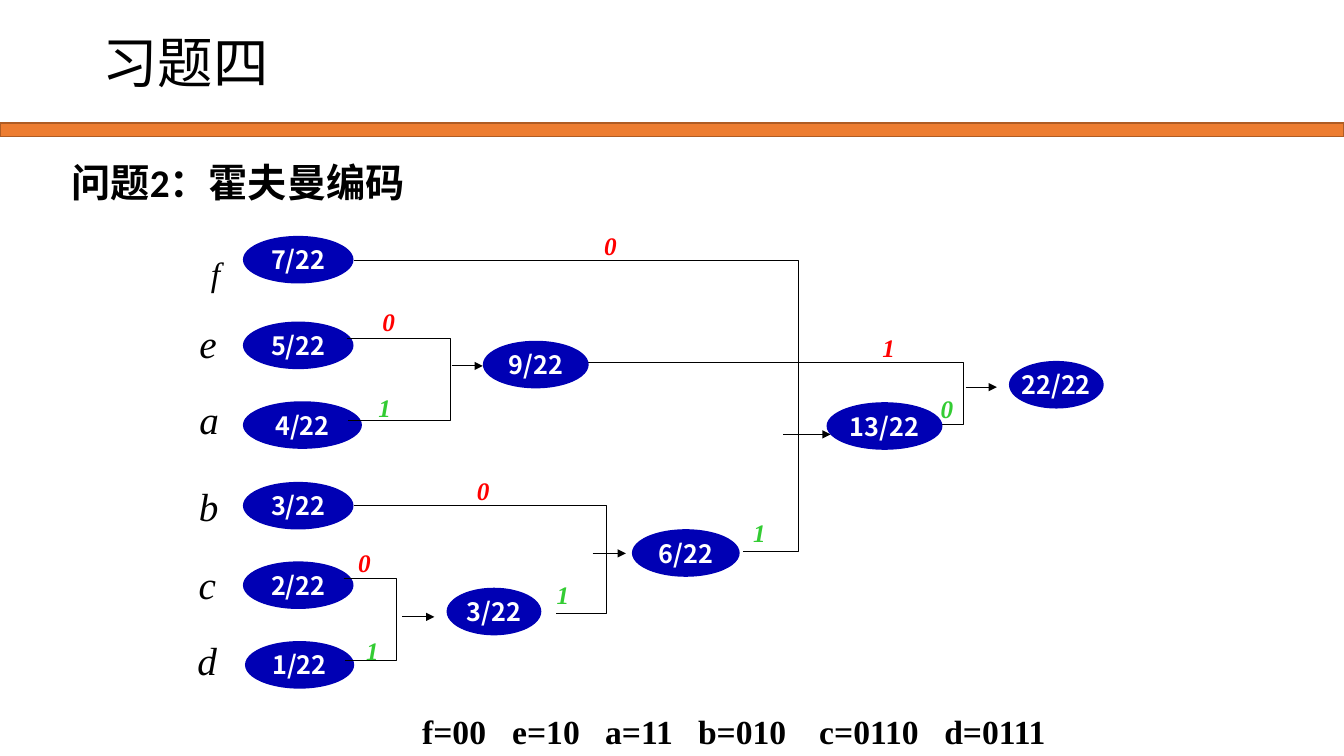
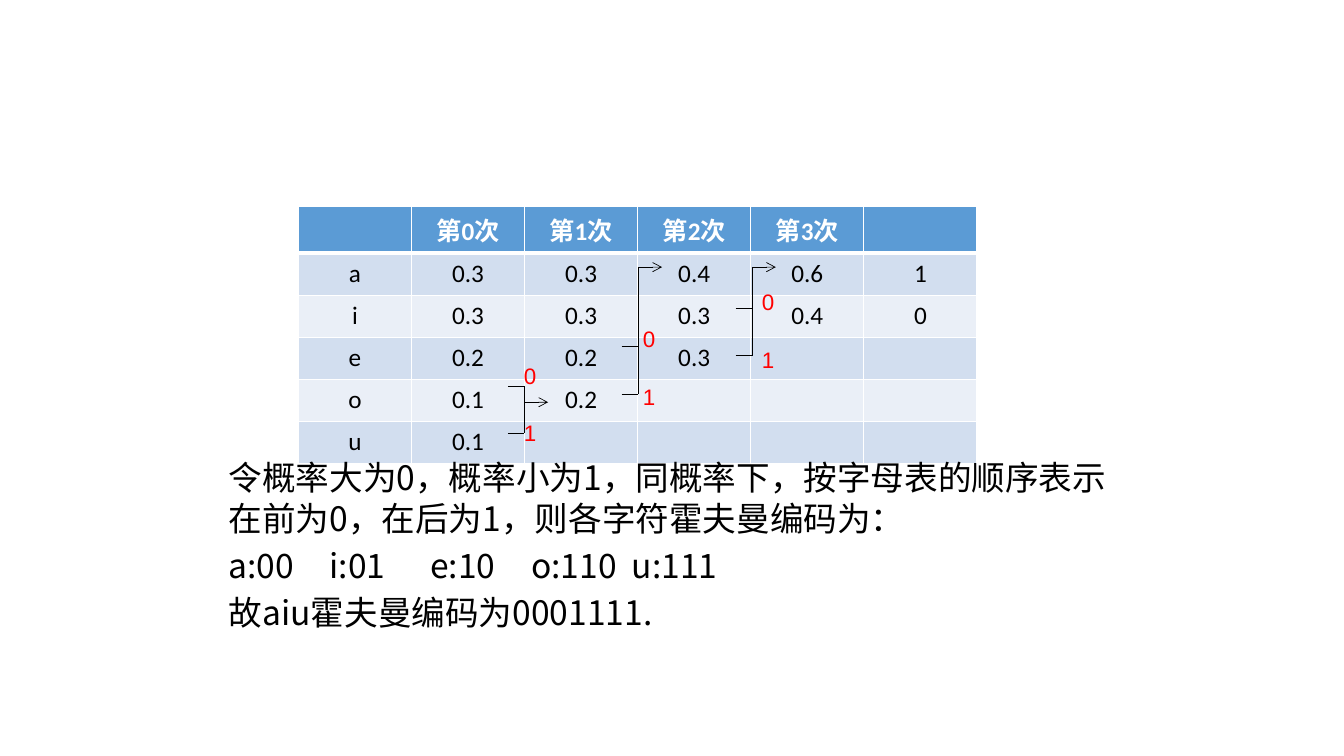
from lxml.etree import SubElement
from pptx import Presentation
from pptx.dml.color import RGBColor
from pptx.enum.shapes import MSO_CONNECTOR, MSO_SHAPE
from pptx.enum.text import MSO_ANCHOR, MSO_AUTO_SIZE, PP_ALIGN
from pptx.oxml.ns import qn
from pptx.util import Pt

COLORS = {
    "black": "000000",
    "white": "FFFFFF",
    "band": "ED7D31",
    "band_line": "AF5C24",
    "node": "0000B4",
    "red": "FF0000",
    "green": "33CC33",
    "header": "5B9BD5",
    "odd_row": "D2DEEF",
    "even_row": "EAEFF7",
}
SANS = "Calibri"
SERIF = "Times New Roman"
CHINESE = "Noto Sans CJK SC"

LEAVES = [
    ("7/22", 173.5, 168.5, 79),
    ("5/22", 173.5, 229.7, 79),
    ("4/22", 173.5, 286.6, 85),
    ("3/22", 173.5, 344.2, 79),
    ("2/22", 173.5, 401, 79),
    ("1/22", 175, 457.9, 78),
]
MERGED_NODES = [
    ("3/22", 319, 419.8, 67.7),
    ("6/22", 451.4, 378, 77),
    ("22/22", 720.7, 257.8, 67.7),
    ("13/22", 590.4, 287.3, 82.8),
    ("9/22", 344.9, 243.4, 75.6),
]
LETTERS = [
    ("f", 154, 195, 24),
    ("e", 148.7, 244.8, 28),
    ("a", 149.5, 299.5, 28),
    ("b", 149, 361.4, 28),
    ("c", 148, 417, 28),
    ("d", 148, 471.6, 28),
]
BRANCHES = [
    (245.5, 413.3, 246.5, 471.6, 283.7),
    (252.7, 185.8, 530.6, 393.8, 570.2),
    (252.7, 361.4, 397.4, 438.5, 433.4),
    (247.7, 241.9, 248.7, 300.2, 322.6),
    (415.4, 259.2, 660.2, 303.1, 688.3),
]
ARROWS = [
    (287.3, 310.3, 440.6),
    (423.4, 447.1, 395.3),
    (322.6, 344.9, 261.4),
    (559.4, 593.3, 310.3),
    (689.8, 712.1, 276.5),
]
BRANCH_DIGITS = [
    ("0", 436, 175, "red"),
    ("1", 634.7, 248.4, "red"),
    ("0", 277.6, 229.7, "red"),
    ("0", 345.2, 350.6, "red"),
    ("0", 260.3, 401.8, "red"),
    ("0", 676.4, 291.6, "green"),
    ("1", 542.5, 380.2, "green"),
    ("1", 274.7, 290.9, "green"),
    ("1", 402.1, 424.8, "green"),
    ("1", 266, 464.4, "green"),
]
PROBABILITIES = [
    ["", "第0次", "第1次", "第2次", "第3次", ""],
    ["a", "0.3", "0.3", "0.4", "0.6", "1"],
    ["i", "0.3", "0.3", "0.3", "0.4", "0"],
    ["e", "0.2", "0.2", "0.3", "", ""],
    ["o", "0.1", "0.2", "", "", ""],
    ["u", "0.1", "", "", "", ""],
]
MERGES = [
    (374.4, 275.8, 287.3, -7.2, -21),
    (455.8, 247.7, 190.8, -3.6, -18.7),
    (537.1, 220.3, 190.8, 0, -18),
]
CONCLUSION = [
    "令概率大为0，概率小为1，同概率下，按字母表的顺序表示在前为0，在后为1，则各字符霍夫曼编码为：",
    "a:00\ti:01\te:10\to:110\tu:111",
    "故aiu霍夫曼编码为0001111.",
]


def rgb(name):
    return RGBColor.from_string(COLORS[name])


class Deck:
    def __init__(self):
        self.presentation = Presentation()
        self.presentation.slide_width = Pt(960)
        self.presentation.slide_height = Pt(540)
        self.slide = None

    def new_slide(self, layout):
        layouts = self.presentation.slide_layouts
        self.slide = self.presentation.slides.add_slide(layouts[layout])

    def place(self, shape, left, top, width, height):
        shape.left, shape.top = Pt(left), Pt(top)
        shape.width, shape.height = Pt(width), Pt(height)

    def format(self, paragraph, font, size, color="black", bold=False, italic=False):
        for run in paragraph.runs:
            run.font.name = font
            run.font.size = Pt(size)
            run.font.bold = bold
            run.font.italic = italic
            run.font.color.rgb = rgb(color)
            SubElement(run.font._element, qn("a:ea"), typeface=CHINESE)

    def title(self, text):
        shape = self.slide.shapes.title
        self.place(shape, 66, 29, 690, 36)
        frame = shape.text_frame
        frame.text = text
        frame.auto_size = MSO_AUTO_SIZE.NONE
        frame.vertical_anchor = MSO_ANCHOR.MIDDLE
        paragraph = frame.paragraphs[0]
        paragraph.alignment = PP_ALIGN.LEFT
        paragraph.line_spacing = 0.9
        self.format(paragraph, SANS, 39.6)

    def band(self):
        shape = self.slide.shapes.add_shape(
            MSO_SHAPE.RECTANGLE, Pt(0), Pt(88), Pt(960), Pt(9.5))
        shape.shadow.inherit = False
        shape.fill.solid()
        shape.fill.fore_color.rgb = rgb("band")
        shape.line.color.rgb = rgb("band_line")
        shape.line.width = Pt(1)

    def text(self, text, left, top, width, height, font, size, **style):
        shape = self.slide.shapes.add_textbox(
            Pt(left), Pt(top), Pt(width), Pt(height))
        frame = shape.text_frame
        frame.word_wrap = True
        frame.text = text
        self.format(frame.paragraphs[0], font, size, **style)
        return shape

    def label(self, text, center, middle, size, **style):
        width, height = 40, 26
        shape = self.text(text, center - width / 2, middle - height / 2,
                          width, height, SERIF, size, italic=True, **style)
        shape.text_frame.word_wrap = False
        shape.text_frame.vertical_anchor = MSO_ANCHOR.MIDDLE
        shape.text_frame.paragraphs[0].alignment = PP_ALIGN.CENTER

    def code_line(self, codes, stops):
        shape = self.text("\t".join(codes), 294.5, 504, 475, 36,
                          SERIF, 24, bold=True)
        properties = shape.text_frame.paragraphs[0]._p.get_or_add_pPr()
        tabs = SubElement(properties, qn("a:tabLst"))
        for stop in stops:
            SubElement(tabs, qn("a:tab"), pos=str(Pt(stop)), algn="l")

    def node(self, text, left, top, width):
        shape = self.slide.shapes.add_shape(
            MSO_SHAPE.OVAL, Pt(left), Pt(top), Pt(width), Pt(34))
        shape.shadow.inherit = False
        shape.fill.solid()
        shape.fill.fore_color.rgb = rgb("node")
        shape.line.fill.background()
        frame = shape.text_frame
        frame.text = text
        frame.word_wrap = False
        frame.vertical_anchor = MSO_ANCHOR.MIDDLE
        frame.paragraphs[0].alignment = PP_ALIGN.CENTER
        self.format(frame.paragraphs[0], CHINESE, 18, "white", bold=True)

    def line(self, x1, y1, x2, y2, width=0.75, head=None, kind=MSO_CONNECTOR.STRAIGHT):
        connector = self.slide.shapes.add_connector(
            kind, Pt(x1), Pt(y1), Pt(x2), Pt(y2))
        connector.line.color.rgb = rgb("black")
        connector.line.width = Pt(width)
        if head:
            SubElement(connector.line._get_or_add_ln(), qn("a:tailEnd"), type=head)
        SubElement(connector._element.spPr, qn("a:effectLst"))
        return connector

    def branch(self, x1, y1, x2, y2, bend):
        connector = self.line(x1, y1, x2, y2, kind=MSO_CONNECTOR.ELBOW)
        geometry = connector._element.spPr.find(qn("a:prstGeom"))
        adjustments = geometry.find(qn("a:avLst"))
        ratio = round((bend - x1) / (x2 - x1) * 100000)
        SubElement(adjustments, qn("a:gd"), name="adj1", fmla=f"val {ratio}")

    def merge(self, spine, upper, target, digit_x, digit_y):
        lower = upper + 33.8
        self.line(spine, target, spine + 17.1, target, 0.5, "arrow")
        for y in (upper, lower):
            self.line(spine - 11.7, y, spine, y, 0.5)
        self.line(spine, min(upper, target), spine, lower, 0.5)
        for index, digit in enumerate("01"):
            self.text(digit, spine + digit_x, upper + digit_y + index * 41.4,
                      24.5, 26.6, "Arial", 16, color="red")

    def cell_border(self, cell, bottom):
        properties = cell._tc.get_or_add_tcPr()
        sides = [("a:lnL", 1), ("a:lnR", 1), ("a:lnT", 1), ("a:lnB", bottom)]
        for index, (side, width) in enumerate(sides):
            border = SubElement(properties, qn(side), w=str(Pt(width)))
            fill = SubElement(border, qn("a:solidFill"))
            SubElement(fill, qn("a:srgbClr"), val=COLORS["white"])
            properties.insert(index, border)

    def table(self, rows, left, top, column_width, row_height):
        columns = len(rows[0])
        table = self.slide.shapes.add_table(
            len(rows), columns, Pt(left), Pt(top),
            Pt(column_width * columns), Pt(row_height * len(rows))).table
        table.first_row = table.horz_banding = False
        for row, values in enumerate(rows):
            header = row == 0
            fill = "header" if header else ("even_row", "odd_row")[row % 2]
            for column, value in enumerate(values):
                cell = table.cell(row, column)
                cell.text = value
                cell.fill.solid()
                cell.fill.fore_color.rgb = rgb(fill)
                paragraph = cell.text_frame.paragraphs[0]
                paragraph.alignment = PP_ALIGN.CENTER
                self.format(paragraph, SANS, 18,
                            "white" if header else "black", bold=header)
                self.cell_border(cell, 3 if header or row == 0 else 1)

    def body(self, lines, left, top, width, height):
        shape = self.slide.placeholders[1]
        self.place(shape, left, top, width, height)
        self.slide.shapes._spTree.append(shape._element)
        frame = shape.text_frame
        frame.text = "\n".join(lines)
        frame.auto_size = MSO_AUTO_SIZE.NONE
        for index, paragraph in enumerate(frame.paragraphs):
            paragraph.line_spacing = Pt(29.3)
            paragraph.space_before = Pt(4.3 if index else 0)
            properties = paragraph._p.get_or_add_pPr()
            properties.set("marL", "0")
            properties.set("indent", "0")
            SubElement(properties, qn("a:buNone"))
            self.format(paragraph, CHINESE, 24)

    def remove_title(self):
        element = self.slide.shapes.title._element
        element.getparent().remove(element)


def build_tree_slide(deck):
    deck.new_slide(5)
    deck.title("习题四")
    deck.band()
    heading = deck.text("问题2：霍夫曼编码", 44, 113.5, 480, 38, SANS, 28, bold=True)
    heading.text_frame.paragraphs[0].line_spacing = 0.9
    for letter, center, middle, size in LETTERS:
        deck.label(letter, center, middle, size)
    for leaf in LEAVES:
        deck.node(*leaf)
    for branch in BRANCHES:
        deck.branch(*branch)
    for start, end, y in ARROWS:
        deck.line(start, y, end, y, head="triangle")
    for merged in MERGED_NODES:
        deck.node(*merged)
    for digit, center, middle, color in BRANCH_DIGITS:
        deck.label(digit, center, middle, 18, color=color, bold=True)
    deck.code_line(["f=00", "e=10", "a=11", "b=010", "c=0110", "d=0111"],
                   [64.3, 130.7, 197, 283.6, 372.9])


def build_table_slide(deck):
    deck.new_slide(1)
    deck.remove_title()
    deck.table(PROBABILITIES, 213.1, 147.6, 80.8, 30)
    deck.body(CONCLUSION, 156.2, 322, 648, 135)
    for merge in MERGES:
        deck.merge(*merge)


def main():
    deck = Deck()
    build_tree_slide(deck)
    build_table_slide(deck)
    deck.presentation.save("out.pptx")


if __name__ == "__main__":
    main()
